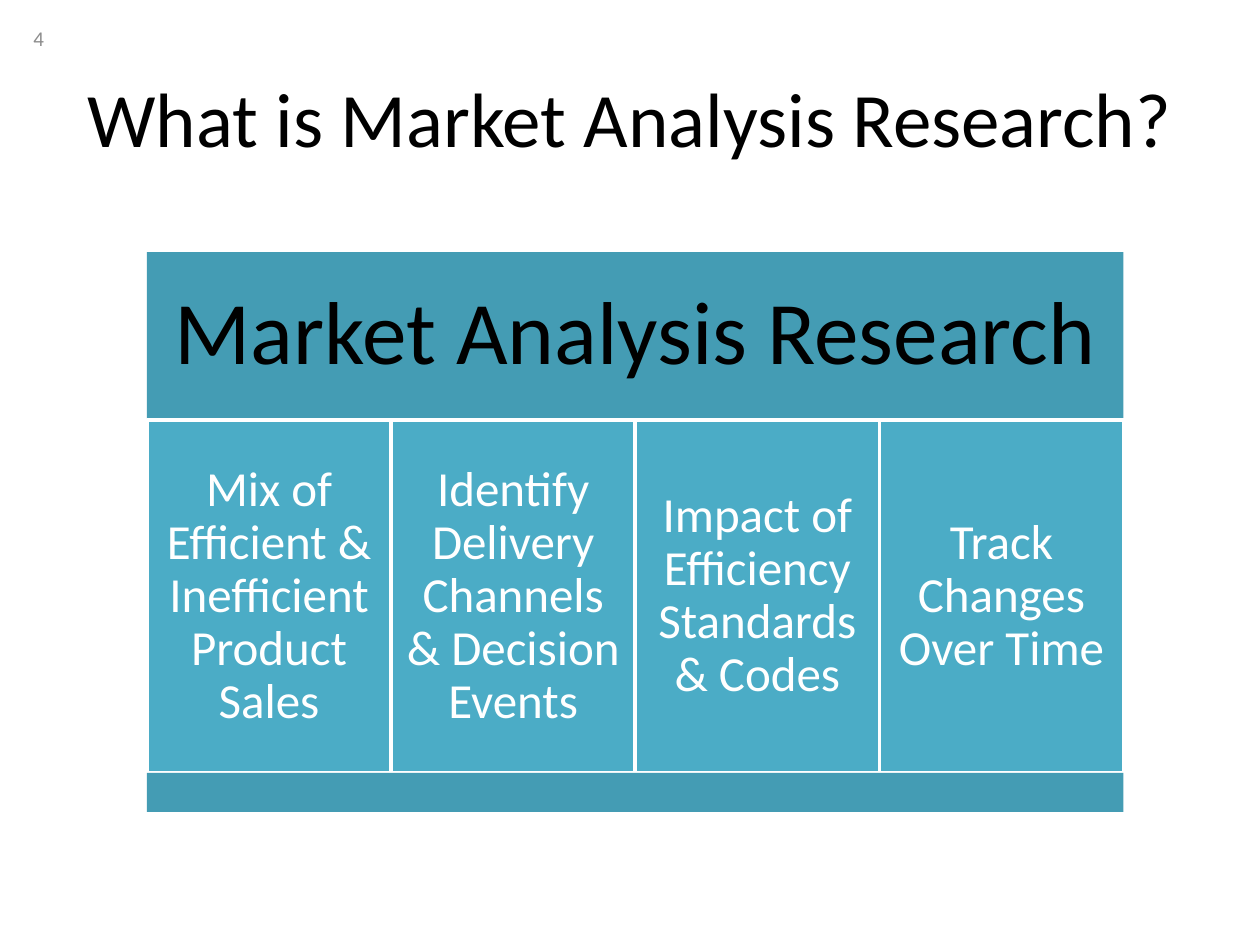
"""Build the market analysis research slide."""
from pptx import Presentation
from pptx.dml.color import RGBColor
from pptx.enum.shapes import MSO_SHAPE
from pptx.enum.text import MSO_ANCHOR, PP_ALIGN
from pptx.util import Pt


def write(shape, text, size, color, align=PP_ALIGN.CENTER, inset=None, spacing=None):
    frame = shape.text_frame
    frame.word_wrap = True
    frame.vertical_anchor = MSO_ANCHOR.MIDDLE
    if inset is not None:
        frame.margin_left = frame.margin_right = Pt(inset)
        frame.margin_top = frame.margin_bottom = Pt(inset)
    paragraph = frame.paragraphs[0]
    paragraph.text = text
    paragraph.alignment = align
    paragraph.line_spacing = spacing
    paragraph.font.name = "Calibri"
    paragraph.font.size = Pt(size)
    paragraph.font.color.rgb = RGBColor.from_string(color)


def add_block(left, top, width, height, fill, line=None):
    block = slide.shapes.add_shape(
        MSO_SHAPE.RECTANGLE, Pt(left), Pt(top), Pt(width), Pt(height))
    block.shadow.inherit = False
    block.fill.solid()
    block.fill.fore_color.rgb = RGBColor.from_string(fill)
    if line:
        block.line.color.rgb = RGBColor.from_string(line)
        block.line.width = Pt(2)
    else:
        block.line.fill.background()
    return block


prs = Presentation()
prs.slide_width, prs.slide_height = Pt(720), Pt(540)
slide = prs.slides.add_slide(prs.slide_layouts[6])

title = slide.shapes.add_textbox(Pt(36), Pt(21.6), Pt(648), Pt(90))
write(title, "What is Market Analysis Research?", 44, "000000")

page_number = slide.shapes.add_textbox(Pt(12), Pt(7.2), Pt(168), Pt(28.8))
write(page_number, "4", 12, "8C8C8C", PP_ALIGN.LEFT)

left, top, width = 84, 144, 558
header_height, topic_height, footer_height = 96, 201.6, 22.4
topics = [
    "Mix of Efficient & Inefficient Product Sales",
    "Identify Delivery Channels & Decision Events",
    "Impact of Efficiency Standards & Codes",
    "Track Changes Over Time",
]

header = add_block(left, top, width, header_height, "449CB4")
write(header, "Market Analysis Research", 51, "000000", inset=15.3, spacing=0.9)

topic_top = top + header_height
topic_width = width / len(topics)
for column, topic in enumerate(topics):
    topic_block = add_block(left + column * topic_width, topic_top,
                            topic_width, topic_height, "4BACC6", "FFFFFF")
    write(topic_block, topic, 28, "FFFFFF", inset=8.4, spacing=0.9)

add_block(left, topic_top + topic_height, width, footer_height, "449CB4")

prs.save("out.pptx")
